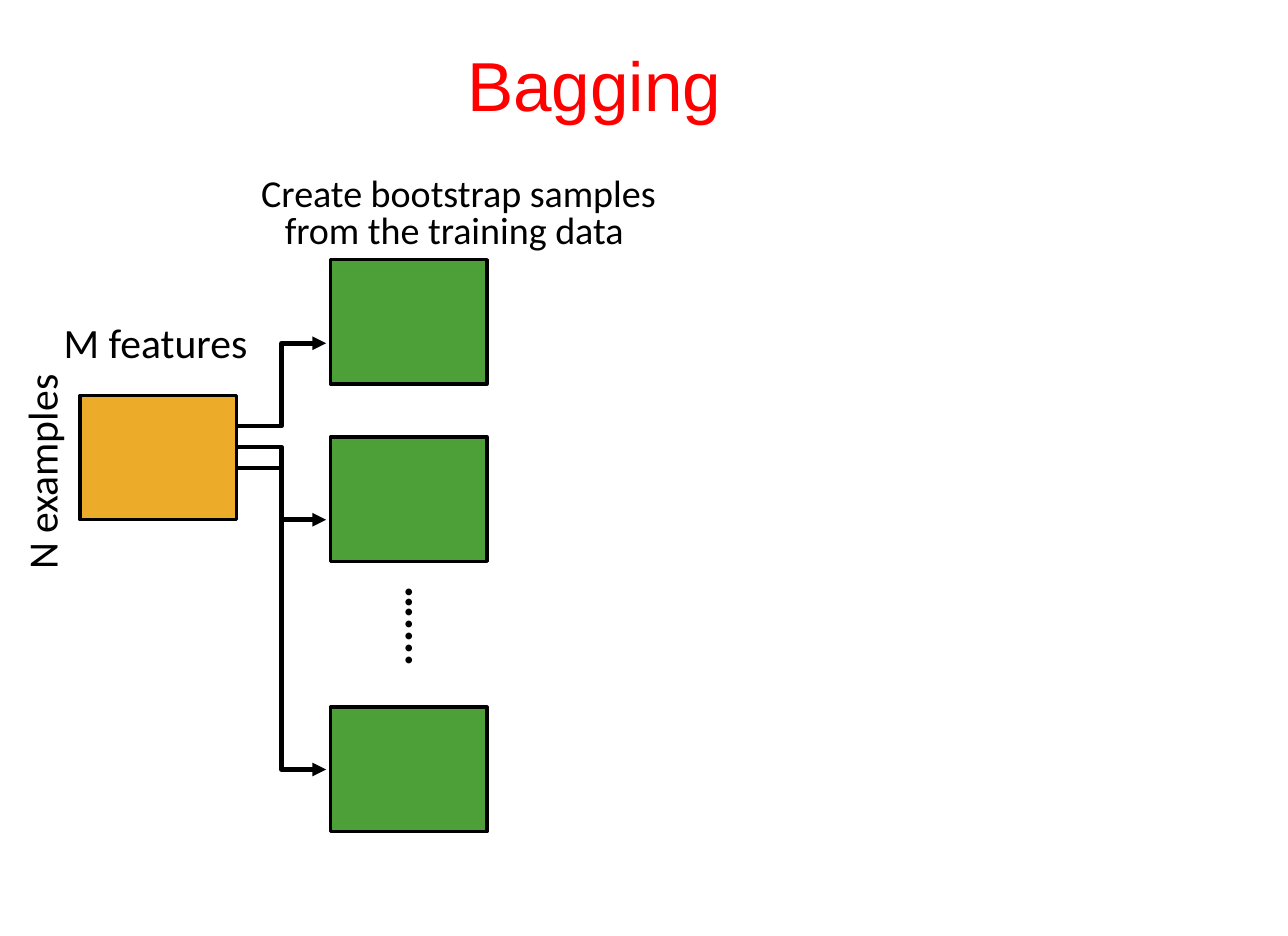
from lxml import etree
from pptx import Presentation
from pptx.dml.color import RGBColor
from pptx.enum.shapes import MSO_CONNECTOR, MSO_SHAPE
from pptx.enum.text import MSO_AUTO_SIZE, PP_ALIGN
from pptx.oxml.ns import qn
from pptx.util import Cm, Pt

ELBOW = MSO_CONNECTOR.ELBOW
RECTANGLE = MSO_SHAPE.RECTANGLE
GROW = MSO_AUTO_SIZE.SHAPE_TO_FIT_TEXT
LEFT, CENTER = PP_ALIGN.LEFT, PP_ALIGN.CENTER

COLORS = {"title": "FF0000", "ink": "000000", "sample": "4D9F37", "training": "ECAB28"}
BLOCK_WIDTH, BLOCK_HEIGHT = 3.61, 2.87
SAMPLE_LEFT = 7.62
TRAINING_LEFT, TRAINING_TOP = 1.85, 9.12
ARROW_START, ARROW_END = TRAINING_LEFT + BLOCK_WIDTH, 7.52


def rgb(name):
    return RGBColor.from_string(COLORS[name])


class SlideBuilder:
    def __init__(self, page, font="Calibri"):
        self.page = page
        self.font = font

    def label(self, lines, left, top, width, height, size, color="ink", font=None,
              bold=False, align=LEFT, spacing=None, rotation=0, wrap=False, inset=None):
        box = self.page.shapes.add_textbox(Cm(left), Cm(top), Cm(width), Cm(height))
        box.rotation = rotation
        frame = box.text_frame
        frame.word_wrap = wrap
        frame.auto_size = GROW
        if inset is not None:
            frame.margin_left = frame.margin_right = Cm(inset)
            frame.margin_top = frame.margin_bottom = Cm(inset)
        frame.text = "\n".join(lines)
        for para in frame.paragraphs:
            para.alignment = align
            para.line_spacing = spacing
            for span in para.runs:
                span.font.name = font or self.font
                span.font.size = Pt(size)
                span.font.bold = bold
                span.font.color.rgb = rgb(color)

    def block(self, left, top, fill):
        box = self.page.shapes.add_shape(
            RECTANGLE, Cm(left), Cm(top), Cm(BLOCK_WIDTH), Cm(BLOCK_HEIGHT))
        box.shadow.inherit = False
        box.fill.solid()
        box.fill.fore_color.rgb = rgb(fill)
        box.line.color.rgb = rgb("ink")
        box.line.width = Pt(2.25)

    def arrow(self, start_y, end_y):
        """Draw an elbow arrow from the training data to a sample."""
        arrow = self.page.shapes.add_connector(
            ELBOW, Cm(ARROW_START), Cm(start_y), Cm(ARROW_END), Cm(end_y))
        arrow.line.color.rgb = rgb("ink")
        arrow.line.width = Pt(3)
        properties = arrow._element.spPr
        etree.SubElement(properties.find(qn("a:ln")), qn("a:tailEnd"), type="triangle")
        etree.SubElement(properties, qn("a:effectLst"))


def main():
    deck = Presentation()
    deck.slide_width, deck.slide_height = Cm(29.7), Cm(21.59)
    slide = SlideBuilder(deck.slides.add_slide(deck.slide_layouts[6]))

    slide.label(["Bagging"], 10.77, 0.97, 6.43, 1.93, 45.3, color="title",
                font="Arial", wrap=True, inset=0)
    slide.label(["N examples"], -1.57, 10.16, 5.05, 1.42, 27.2, rotation=270)
    slide.label(["M features"], 1.22, 7.19, 4.78, 1.42, 27.2)
    slide.label(["Create bootstrap samples", "from the training data "],
                1.7, 3.99, 17.75, 1.98, 24.9, align=CENTER, spacing=0.8, wrap=True)

    slide.block(TRAINING_LEFT, TRAINING_TOP, "training")
    for sample_top, start_y, end_y in [(5.99, 9.83, 7.92),
                                       (10.08, 10.8, 11.99),
                                       (16.31, 10.31, 17.75)]:
        slide.block(SAMPLE_LEFT, sample_top, "sample")
        slide.arrow(start_y, end_y)
    slide.label(["....…"], 7.9, 13.67, 2.39, 1.52, 29.5, bold=True, rotation=270)

    deck.save("out.pptx")


if __name__ == "__main__":
    main()
